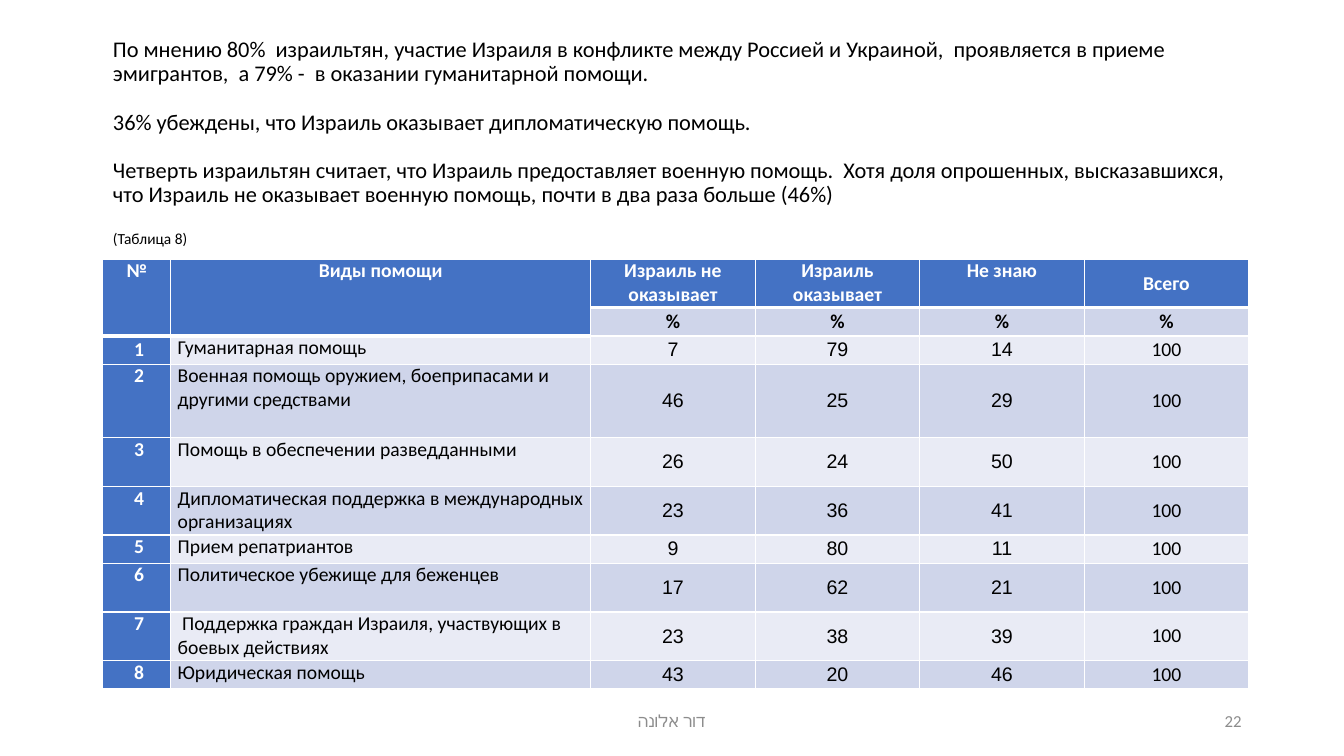
from lxml import etree
from pptx import Presentation
from pptx.dml.color import RGBColor
from pptx.enum import text
from pptx.oxml import ns
from pptx.util import Pt

BLACK = RGBColor(0x00, 0x00, 0x00)
WHITE = RGBColor(0xFF, 0xFF, 0xFF)
BLUE = RGBColor(0x44, 0x72, 0xC4)
DARK_BAND = RGBColor(0xCF, 0xD5, 0xEA)
LIGHT_BAND = RGBColor(0xE9, 0xEB, 0xF5)
GREY = RGBColor(0x8C, 0x8C, 0x8C)
FONT = "Calibri"
DIGIT_FONT = "Arial"

LEFT, CENTER, RIGHT = text.PP_ALIGN.LEFT, text.PP_ALIGN.CENTER, text.PP_ALIGN.RIGHT
TOP, MIDDLE = text.MSO_ANCHOR.TOP, text.MSO_ANCHOR.MIDDLE

TITLE = [
    "По мнению 80%  израильтян, участие Израиля в конфликте между Россией и Украиной,  "
    "проявляется в приеме эмигрантов,  а 79% -  в оказании гуманитарной помощи.",
    "36% убеждены, что Израиль оказывает дипломатическую помощь.",
    "Четверть израильтян считает, что Израиль предоставляет военную помощь.  Хотя доля "
    "опрошенных, высказавшихся, что Израиль не оказывает военную помощь, почти в два раза "
    "больше (46%)",
    "(Таблица 8)",
]
HEADERS = ["№", "Виды помощи", "Израиль не оказывает", "Израиль оказывает", "Не знаю", "Всего"]
AID_KINDS = [
    ("Гуманитарная помощь", 7, 79, 14),
    ("Военная помощь оружием, боеприпасами и другими средствами", 46, 25, 29),
    ("Помощь в обеспечении разведданными", 26, 24, 50),
    ("Дипломатическая поддержка в международных организациях", 23, 36, 41),
    ("Прием репатриантов", 9, 80, 11),
    ("Политическое убежище для беженцев", 17, 62, 21),
    (" Поддержка граждан Израиля, участвующих в боевых действиях", 23, 38, 39),
    ("Юридическая помощь", 43, 20, 46),
]
COLUMN_WIDTHS = [48.5, 300] + [117.5] * 4
ONE_LINE, TWO_LINES, THREE_LINES = 20.25, 34.75, 52.5
ROW_HEIGHTS = [TWO_LINES, ONE_LINE, ONE_LINE, THREE_LINES, TWO_LINES, TWO_LINES,
               ONE_LINE, TWO_LINES, TWO_LINES, ONE_LINE]


def write(paragraph, content, size=14, color=BLACK, bold=False, align=LEFT, rtl=False):
    paragraph.alignment = align
    run = paragraph.add_run()
    run.text = content
    font = run.font
    font.name, font.size, font.bold = FONT, Pt(size), bold
    font.color.rgb = color
    if rtl:
        paragraph._p.get_or_add_pPr().set("rtl", "1")
        complex_font = etree.SubElement(run._r.get_or_add_rPr(), ns.qn("a:cs"))
        complex_font.set("typeface", DIGIT_FONT)


def set_borders(cell, bottom=1):
    properties = cell._tc.get_or_add_tcPr()
    widths = {"a:lnL": 1, "a:lnR": 1, "a:lnT": 1, "a:lnB": bottom}
    for position, (tag, width) in enumerate(widths.items()):
        line = etree.Element(ns.qn(tag), w=str(Pt(width)))
        fill = etree.SubElement(line, ns.qn("a:solidFill"))
        etree.SubElement(fill, ns.qn("a:srgbClr"), val=str(WHITE))
        properties.insert(position, line)


def fill_cell(cell, content, fill, anchor=MIDDLE, bottom=1, **text_format):
    cell.fill.solid()
    cell.fill.fore_color.rgb = fill
    set_borders(cell, bottom)
    cell.margin_left = cell.margin_right = Pt(5)
    cell.margin_top = cell.margin_bottom = 0
    cell.vertical_anchor = anchor
    if content:
        write(cell.text_frame.paragraphs[0], content, **text_format)


def format_title(title):
    title.left, title.top, title.width, title.height = Pt(73.5), Pt(13), Pt(828), Pt(178.5)
    frame = title.text_frame
    frame.word_wrap = True
    frame.auto_size = text.MSO_AUTO_SIZE.NONE
    frame.vertical_anchor = MIDDLE
    for index, content in enumerate(TITLE):
        paragraph = frame.add_paragraph() if index else frame.paragraphs[0]
        paragraph.line_spacing = 0.9
        paragraph.space_before = Pt(17.25 if index else 0)
        write(paragraph, content, size=11 if content == TITLE[-1] else 16)


def add_aid_table(slide):
    shape = slide.shapes.add_table(len(ROW_HEIGHTS), len(HEADERS), Pt(73.5), Pt(185),
                                   Pt(sum(COLUMN_WIDTHS)), Pt(sum(ROW_HEIGHTS)))
    table = shape.table
    table.first_row = table.horz_banding = False
    for column, width in zip(table.columns, COLUMN_WIDTHS):
        column.width = Pt(width)
    for row, height in zip(table.rows, ROW_HEIGHTS):
        row.height = Pt(height)

    # Two header rows, the first two columns joined
    for index, header in enumerate(HEADERS):
        fill_cell(table.cell(0, index), header, BLUE, bottom=3, color=WHITE, bold=True,
                  align=CENTER, anchor=MIDDLE if header == "Всего" else TOP)
        if index < 2:
            fill_cell(table.cell(1, index), "", BLUE, bottom=3)
            table.cell(0, index).merge(table.cell(1, index))
        else:
            fill_cell(table.cell(1, index), "%", DARK_BAND, bold=True, align=CENTER)

    # Banded rows with the shares
    for number, (kind, *shares) in enumerate(AID_KINDS, start=1):
        row = number + 1
        band = LIGHT_BAND if number % 2 else DARK_BAND
        fill_cell(table.cell(row, 0), f"\N{NO-BREAK SPACE}{number}", BLUE, color=WHITE,
                  bold=True, align=CENTER, anchor=MIDDLE if number == 1 else TOP)
        fill_cell(table.cell(row, 1), kind, band, anchor=TOP)
        for index, share in enumerate(shares, start=2):
            fill_cell(table.cell(row, index), str(share), band, align=CENTER, rtl=True)
        fill_cell(table.cell(row, 5), "100", band, align=CENTER)


def add_footer_text(slide, content, left, width, align):
    frame = slide.shapes.add_textbox(Pt(left), Pt(500.5), Pt(width), Pt(28.75)).text_frame
    frame.word_wrap = True
    frame.vertical_anchor = MIDDLE
    write(frame.paragraphs[0], content, size=12, color=GREY, align=align)


def main():
    presentation = Presentation()
    presentation.slide_width, presentation.slide_height = Pt(960), Pt(540)
    slide = presentation.slides.add_slide(presentation.slide_layouts[5])
    format_title(slide.shapes.title)
    add_aid_table(slide)
    # Footer line
    add_footer_text(slide, "22", 678, 216, RIGHT)
    add_footer_text(slide, "דור אלונה", 318, 324, CENTER)
    presentation.save("out.pptx")


if __name__ == "__main__":
    main()
